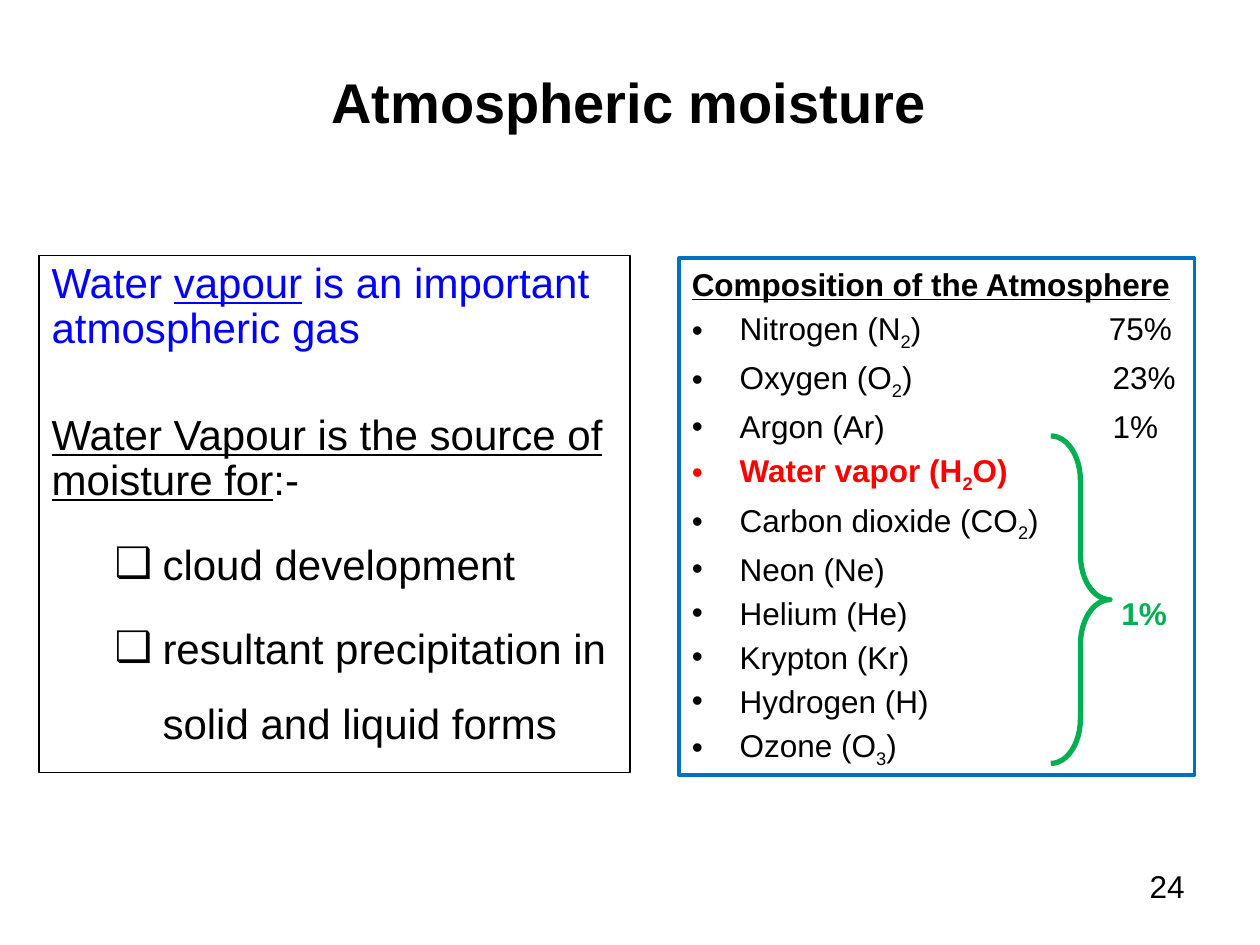
from pptx import Presentation
from pptx.dml.color import RGBColor
from pptx.enum.shapes import MSO_SHAPE
from pptx.enum.text import MSO_ANCHOR, MSO_AUTO_SIZE, PP_ALIGN
from pptx.oxml.ns import qn
from pptx.util import Inches, Pt
from lxml.etree import SubElement

COLORS = {"black": "000000", "white": "FFFFFF", "blue": "0000FF",
          "frame": "0070C0", "red": "FF0000", "green": "00B050"}
GASES = [
    ("Nitrogen (N", "2", ")", "75%", 3.31),
    ("Oxygen (O", "2", ")", "23%", 3.34),
    ("Argon (Ar)", "", "", "1%", 3.34),
    ("Water vapor (H", "2", "O)", "", None),
    ("Carbon dioxide (CO", "2", ")", "", None),
    ("Neon (Ne)", "", "", "", None),
    ("Helium (He)", "", "", "1%", 3.41),
    ("Krypton (Kr)", "", "", "", None),
    ("Hydrogen (H)", "", "", "", None),
    ("Ozone (O", "3", ")", "", None),
]
SOURCES = ["cloud development", "resultant precipitation in solid and liquid forms"]


def rgb(name):
    """Return the named colour."""
    return RGBColor.from_string(COLORS[name])


def place(shape, left, top, width, height):
    """Move and size a shape, in inches."""
    shape.left, shape.top = Inches(left), Inches(top)
    shape.width, shape.height = Inches(width), Inches(height)


def style(para, size, color="black", bold=False):
    """Set the font of a whole paragraph."""
    font = para.font
    font.name, font.size, font.bold = "Arial", Pt(size), bold
    font.color.rgb = rgb(color)


def set_list(para, bullet=None, left=0, hanging=0, tab=None):
    """Set the bullet, indents and tab stop of a paragraph."""
    props = para._p.get_or_add_pPr()
    props.set("marL", str(Inches(left)))
    props.set("indent", str(-Inches(hanging)))
    if bullet:
        SubElement(props, qn("a:buFont"), typeface="Arial")
        SubElement(props, qn("a:buChar"), char=bullet)
    else:
        SubElement(props, qn("a:buNone"))
    if tab:
        stops = SubElement(props, qn("a:tabLst"))
        SubElement(stops, qn("a:tab"), pos=str(Inches(tab)), algn="l")


def add_span(para, text, underline=None):
    """Add a run of text to a paragraph."""
    span = para.add_run()
    span.text = text
    span.font.underline = underline
    return span


def framed_body(body, box, line, width):
    """Place a body placeholder with a white fill and a frame."""
    place(body, *box)
    body.fill.solid()
    body.fill.fore_color.rgb = rgb("white")
    body.line.color.rgb = rgb(line)
    body.line.width = Pt(width)
    frame = body.text_frame
    frame.auto_size = MSO_AUTO_SIZE.NONE
    frame.vertical_anchor = MSO_ANCHOR.TOP
    return frame


def title_region(title, box):
    """Fill the title."""
    place(title, *box)
    title.text_frame.vertical_anchor = MSO_ANCHOR.MIDDLE
    para = title.text_frame.paragraphs[0]
    para.text, para.alignment = "Atmospheric moisture", PP_ALIGN.CENTER
    style(para, 32, bold=True)


def vapour_region(body, box):
    """Fill the box on water vapour as a source of moisture."""
    frame = framed_body(body, box, "black", 0.75)
    intro, lead = frame.paragraphs[0], frame.add_paragraph()
    for para, color, before in ((intro, "blue", 0), (lead, "black", 35)):
        para.line_spacing, para.space_before = 0.9, Pt(before)
        set_list(para)
        style(para, 24, color)
    add_span(intro, "Water ")
    add_span(intro, "vapour", True)
    add_span(intro, " is an important atmospheric gas")
    add_span(lead, "Water Vapour is the source of moisture for", True)
    add_span(lead, ":-")
    for source in SOURCES:
        para = frame.add_paragraph()
        para.text, para.level = source, 1
        para.line_spacing, para.space_before = 1.5, Pt(4.8)
        set_list(para, "❑", 0.88, 0.38)
        style(para, 24)


def composition_region(page, body, box):
    """Fill the list of gases and bracket the trace gases."""
    frame = framed_body(body, box, "frame", 2.25)
    heading = frame.paragraphs[0]
    heading.space_before = Pt(0)
    set_list(heading, None, 0.38, 0.38)
    style(heading, 18, bold=True)
    add_span(heading, "Composition of the Atmosphere", True)
    for name, index, rest, share, tab in GASES:
        para = frame.add_paragraph()
        para.space_before = Pt(3.6)
        set_list(para, "•", 0.38, 0.38, tab)
        is_water = name.startswith("Water")
        style(para, 18, "red" if is_water else "black", is_water)
        add_span(para, name)
        if index:
            add_span(para, index)._r.get_or_add_rPr().set("baseline", "-25000")
            add_span(para, rest)
        if share:
            add_span(para, "\t")
            span = add_span(para, share)
            if name.startswith("Helium"):
                span.font.bold = True
                span.font.color.rgb = rgb("green")
    brace = page.shapes.add_shape(MSO_SHAPE.RIGHT_BRACE, 0, 0, 0, 0)
    place(brace, box[0] + 2.95, box[1] + 1.41, 0.47, 2.6)
    brace.adjustments[0], brace.adjustments[1] = 0.755, 0.5
    brace.shadow.inherit = False
    brace.fill.background()
    brace.line.color.rgb = rgb("green")
    brace.line.width = Pt(3)


def page_number_region(page, box):
    """Add the page number."""
    number = page.shapes.add_textbox(0, 0, 0, 0)
    place(number, *box)
    number.text_frame.word_wrap = True
    para = number.text_frame.paragraphs[0]
    para.text, para.alignment = "24", PP_ALIGN.RIGHT
    style(para, 18)


def main():
    """Build the deck."""
    deck = Presentation()
    deck.slide_width, deck.slide_height = Inches(10), Inches(7.5)
    page = deck.slides.add_slide(deck.slide_layouts[3])
    title, left_body, right_body = page.placeholders
    title_region(title, (0.74, 0.31, 8.5, 0.98))
    vapour_region(left_body, (0.31, 2.03, 4.69, 4.1))
    composition_region(page, right_body, (5.39, 2.05, 4.09, 4.1))
    page_number_region(page, (7.17, 6.83, 2.33, 0.52))
    deck.save("out.pptx")


if __name__ == "__main__":
    main()
